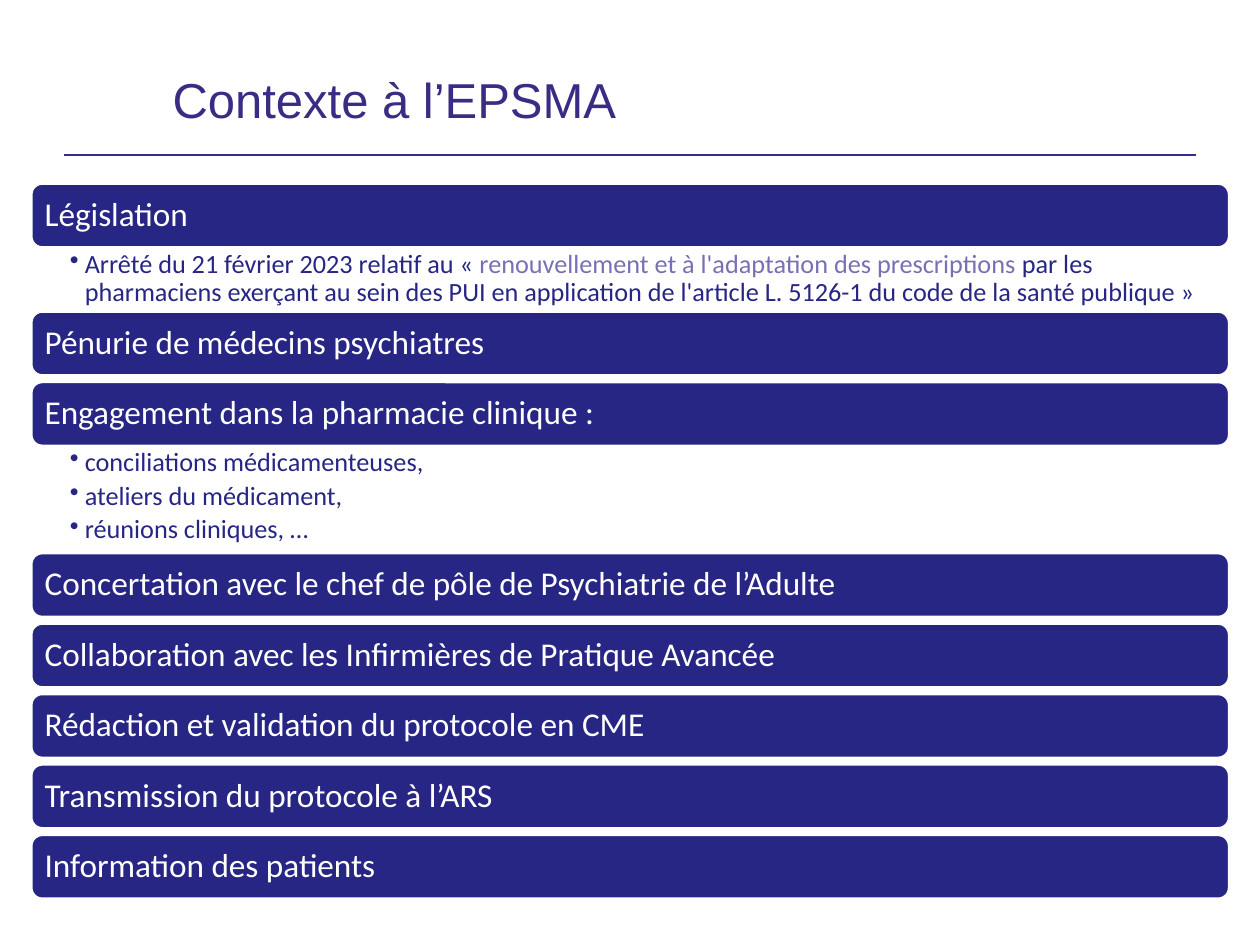
from pptx import Presentation
from pptx import util as u
from pptx.dml.color import RGBColor
from pptx.enum import shapes as sh, text as tx
from pptx.oxml.ns import qn
from lxml import etree

# Content: each bar with its bullets; a bullet is a list of (text, colour) runs
TITLE = "Contexte à l’EPSMA"
BARS = [
    ("Législation", [[
        ("Arrêté du 21 février 2023 relatif au « ", "navy"),
        ("renouvellement et à l'adaptation des prescriptions ", "lilac"),
        ("par les pharmaciens exerçant au sein des PUI en application "
         "de l'article L. 5126-1 du code de la santé publique »", "navy")]]),
    ("Pénurie de médecins psychiatres", []),
    ("Engagement dans la pharmacie clinique :", [
        [("conciliations médicamenteuses,", "navy")],
        [("ateliers du médicament,", "navy")],
        [("réunions cliniques, …", "navy")]]),
    ("Concertation avec le chef de pôle de Psychiatrie de l’Adulte", []),
    ("Collaboration avec les Infirmières de Pratique Avancée", []),
    ("Rédaction et validation du protocole en CME", []),
    ("Transmission du protocole à l’ARS", []),
    ("Information des patients", []),
]
COLORS = {"navy": "272685", "lilac": "7771B4", "title": "392C84",
          "rule": "392C86", "white": "FFFFFF"}

# Layout in centimetres
LEFT, TOP, WIDTH, BAR, GAP = 0.64, 3.71, 24.13, 1.27, 0.15
LISTS = {1: 1.31, 3: 2.18}  # list height by number of bullets


def rgb(name):
    return RGBColor.from_string(COLORS[name])


def write(frame, paras, size, font="Calibri", anchor="middle",
          pad=(0.2, 0.2, 0.2, 0.2), after=0, bullet=False):
    """Fill a text frame with paragraphs made of (text, colour) runs."""
    frame.word_wrap = True
    frame.auto_size = tx.MSO_AUTO_SIZE.NONE
    frame.vertical_anchor = getattr(tx.MSO_ANCHOR, anchor.upper())
    (frame.margin_left, frame.margin_top,
     frame.margin_right, frame.margin_bottom) = [u.Cm(v) for v in pad]
    for i, runs in enumerate(paras):
        para = frame.add_paragraph() if i else frame.paragraphs[0]
        para.alignment = tx.PP_ALIGN.LEFT
        para.line_spacing = 0.9
        para.space_before, para.space_after = u.Pt(0), u.Pt(after)
        if bullet:
            props = para._p.get_or_add_pPr()
            props.set("marL", str(u.Cm(0.3)))
            props.set("indent", str(u.Cm(-0.3)))
            etree.SubElement(props, qn("a:buChar")).set("char", "•")
        for words, color in runs:
            run = para.add_run()
            run.text = words
            run.font.size, run.font.name = u.Pt(size), font
            run.font.color.rgb = rgb(color)


deck = Presentation()
deck.slide_width, deck.slide_height = u.Cm(25.4), u.Cm(19.05)
slide = deck.slides.add_slide(deck.slide_layouts[5])

# Title and rule
head = slide.shapes.title
head.left, head.top, head.width, head.height = [
    u.Cm(v) for v in (3.23, 1.02, 20.87, 2.1)]
write(head.text_frame, [[(TITLE, "title")]], 28, font="Arial",
      pad=(0.25, 0.13, 0.25, 0.13))
rule = slide.shapes.add_connector(
    sh.MSO_CONNECTOR.STRAIGHT, *[u.Cm(v) for v in (1.3, 3.12, 24.1, 3.12)])
rule.line.color.rgb, rule.line.width = rgb("rule"), u.Pt(1)
etree.SubElement(rule._element.spPr, qn("a:effectLst"))

# Bars stacked downwards, each followed by its list or a gap
y = TOP
for label, items in BARS:
    bar = slide.shapes.add_shape(
        sh.MSO_SHAPE.ROUNDED_RECTANGLE,
        u.Cm(LEFT), u.Cm(y), u.Cm(WIDTH), u.Cm(BAR))
    bar.shadow.inherit = False
    bar.fill.solid()
    bar.fill.fore_color.rgb = rgb("navy")
    bar.line.color.rgb, bar.line.width = rgb("white"), u.Pt(1)
    write(bar.text_frame, [[(label, "white")]], 19)
    y += BAR
    if items:
        tall = LISTS[len(items)]
        box = slide.shapes.add_textbox(
            u.Cm(LEFT), u.Cm(y), u.Cm(WIDTH), u.Cm(tall))
        write(box.text_frame, items, 15, anchor="top", after=3,
              pad=(0.77, 0.07, 0.38, 0.07), bullet=True)
        y += tall
    else:
        y += GAP

deck.save("out.pptx")
